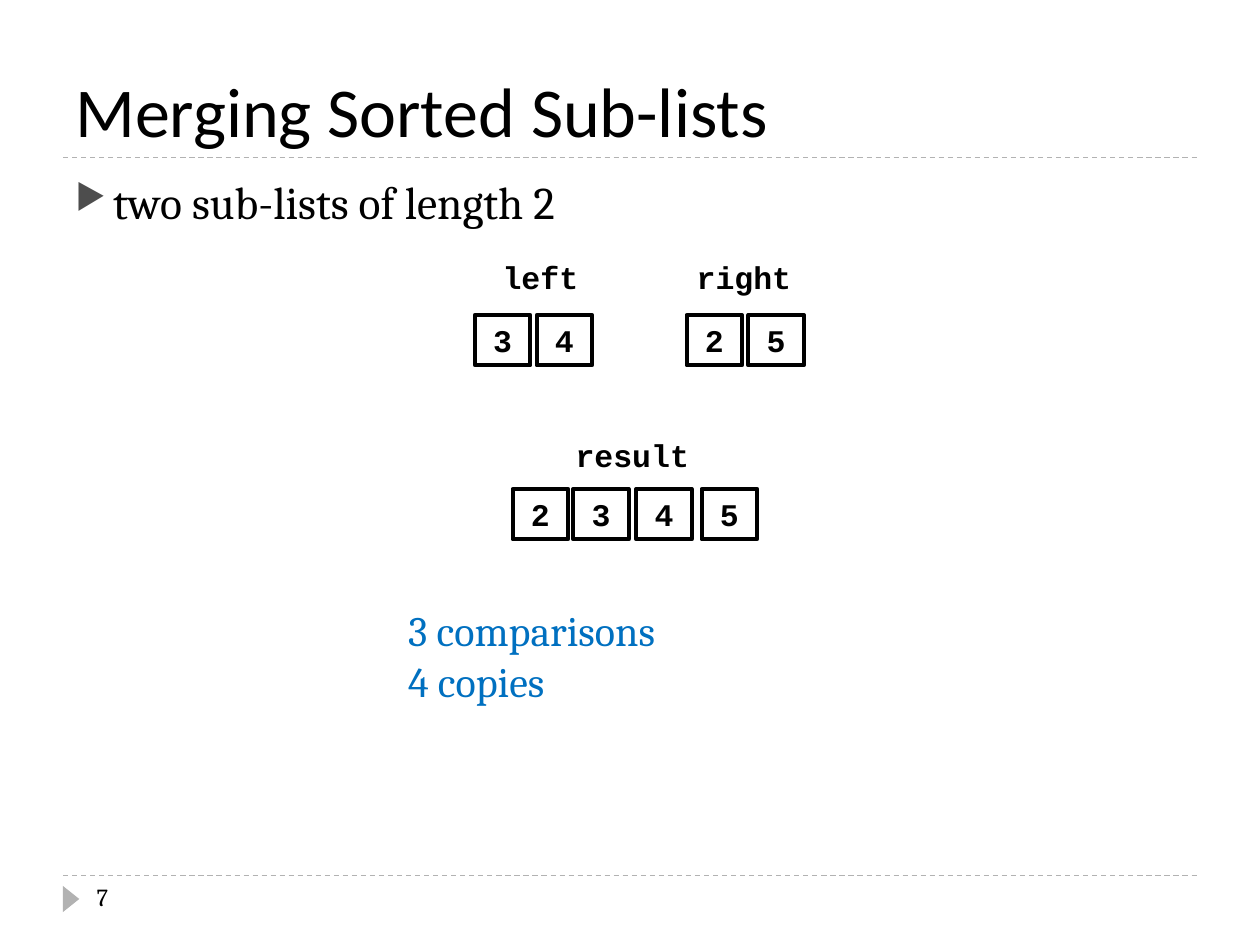
from lxml import etree
from pptx import Presentation
from pptx.dml.color import RGBColor
from pptx.enum.dml import MSO_LINE
from pptx.enum.shapes import MSO_CONNECTOR, MSO_SHAPE
from pptx.enum.text import MSO_ANCHOR, PP_ALIGN
from pptx.oxml.ns import qn
from pptx.util import Pt

DASH = MSO_LINE.DASH
STRAIGHT = MSO_CONNECTOR.STRAIGHT
RECTANGLE, TRIANGLE = MSO_SHAPE.RECTANGLE, MSO_SHAPE.ISOSCELES_TRIANGLE
TOP, MIDDLE, BOTTOM = MSO_ANCHOR.TOP, MSO_ANCHOR.MIDDLE, MSO_ANCHOR.BOTTOM
CENTER = PP_ALIGN.CENTER

COLORS = {"text": "000000", "rule": "B2B2B2", "bullet": "4D4D4D", "count": "0070C0"}
CODE = {"name": "Courier New", "size": Pt(18), "bold": True}


def write(shape, lines, font, color="text", anchor=TOP, wrap=False, align=None):
    """Fill a shape with one paragraph per line, all in the same font."""
    frame = shape.text_frame
    frame.word_wrap = wrap
    frame.vertical_anchor = anchor
    frame.text = "\n".join(lines)
    for para in frame.paragraphs:
        para.alignment = align
        span = para.runs[0]
        for key, value in font.items():
            setattr(span.font, key, value)
        span.font.color.rgb = RGBColor.from_string(COLORS[color])


def add_text(left, top, width, height, lines, font, **options):
    box = page.shapes.add_textbox(Pt(left), Pt(top), Pt(width), Pt(height))
    write(box, lines, font, **options)
    return box


deck = Presentation()
deck.slide_width, deck.slide_height = Pt(720), Pt(540)
page = deck.slides.add_slide(deck.slide_layouts[6])

# Dashed rules and page marker
for y in (500.4, 90):
    rule = page.shapes.add_connector(STRAIGHT, Pt(36), Pt(y), Pt(684), Pt(y))
    rule.line.color.rgb = RGBColor.from_string(COLORS["rule"])
    rule.line.width = Pt(0.75)
    rule.line.dash_style = DASH
    etree.SubElement(rule._element.spPr, qn("a:effectLst"))

marker = page.shapes.add_shape(TRIANGLE, Pt(33.1), Pt(509), Pt(15), Pt(9.4))
marker.rotation = 90
marker.shadow.inherit = False
marker.fill.solid()
marker.fill.fore_color.rgb = RGBColor.from_string(COLORS["rule"])
marker.line.fill.background()

# Title, bullet and page number
add_text(36, 12.2, 648, 77.8, ["Merging Sorted Sub-lists"],
         {"name": "Calibri", "size": Pt(40)}, anchor=BOTTOM, wrap=True)
body = add_text(36, 95.8, 648, 388.8, ["two sub-lists of length 2"],
                {"name": "Cambria", "size": Pt(26)}, wrap=True)
add_text(48.2, 500.4, 156.2, 28.8, ["7"], {"name": "Cambria", "size": Pt(14)}, wrap=True)

bullet_para = body.text_frame.paragraphs[0]
bullet_para.space_before = Pt(6)
props = bullet_para._p.get_or_add_pPr()
props.set("marL", str(Pt(21.6)))
props.set("indent", str(Pt(-21.6)))
bullet_color = etree.SubElement(props, qn("a:buClr"))
etree.SubElement(bullet_color, qn("a:srgbClr"), val=COLORS["bullet"])
etree.SubElement(props, qn("a:buSzPct"), val="76000")
etree.SubElement(props, qn("a:buChar"), char="▶")

# Lists: label, label left, label top, label width, cell top, {value: cell left}
LISTS = [
    ("left", 280.1, 144, 58.3, 180, {"3": 271.4, "4": 306.7}),
    ("right", 391, 144, 69.1, 180, {"2": 392.4, "5": 427.7}),
    ("result", 321.8, 245.5, 79.9, 279.4, {"2": 293, "3": 327.6, "4": 363.6, "5": 401}),
]
for label, label_left, label_top, label_width, cell_top, cells in LISTS:
    add_text(label_left, label_top, label_width, 28.8, [label], CODE)
    for value, cell_left in cells.items():
        cell = page.shapes.add_shape(RECTANGLE, Pt(cell_left), Pt(cell_top), Pt(31.7), Pt(28.8))
        cell.shadow.inherit = False
        cell.fill.background()
        cell.line.color.rgb = RGBColor.from_string(COLORS["text"])
        cell.line.width = Pt(2.25)
        write(cell, [value], CODE, anchor=MIDDLE, align=CENTER)

# Cost of the merge
add_text(226.1, 342, 164.2, 65.5, ["3 comparisons", "4 copies"],
         {"name": "Cambria", "size": Pt(24)}, color="count")

deck.save("out.pptx")
